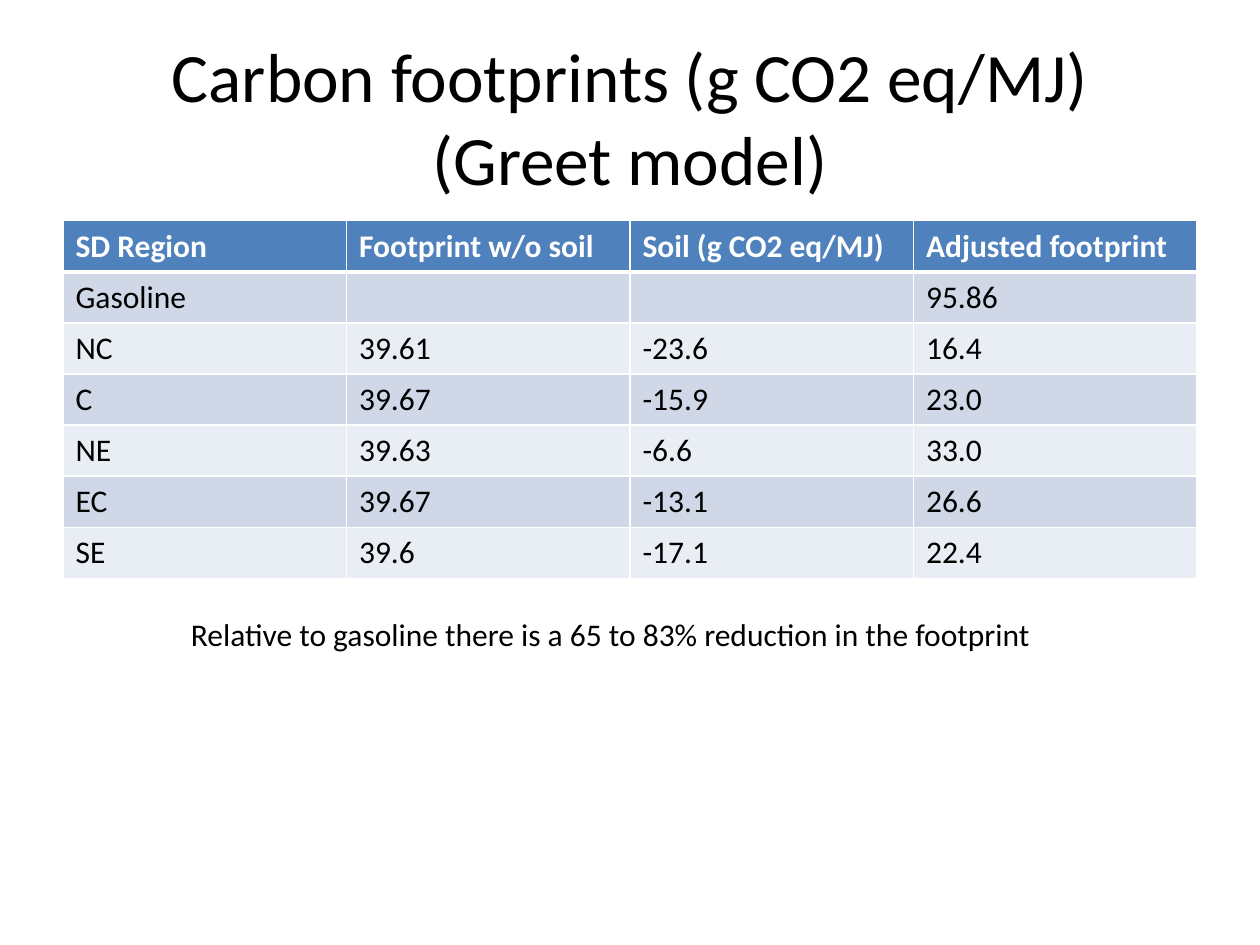
from lxml import etree
from pptx import Presentation
from pptx.dml.color import RGBColor
from pptx.enum.text import MSO_ANCHOR, PP_ALIGN
from pptx.oxml.ns import qn
from pptx.util import Cm, Pt

LEFT, CENTER = PP_ALIGN.LEFT, PP_ALIGN.CENTER
TOP, MIDDLE = MSO_ANCHOR.TOP, MSO_ANCHOR.MIDDLE

FONT = "Calibri"
BLACK, WHITE = "000000", "FFFFFF"
HEADER_FILL = "4F81BD"
BAND_FILLS = ("D0D8E8", "E9EDF4")

FOOTPRINTS = [
    ("SD Region", "Footprint w/o soil", "Soil (g CO2 eq/MJ)", "Adjusted footprint"),
    ("Gasoline", "", "", "95.86"),
    ("NC", "39.61", "-23.6", "16.4"),
    ("C", "39.67", "-15.9", "23.0"),
    ("NE", "39.63", "-6.6", "33.0"),
    ("EC", "39.67", "-13.1", "26.6"),
    ("SE", "39.6", "-17.1", "22.4"),
]


def color(value):
    return RGBColor.from_string(value)


def write_text(text_frame, text, size=18, fill=BLACK, bold=False, align=LEFT):
    paragraph = text_frame.paragraphs[0]
    paragraph.text = text
    paragraph.alignment = align
    for run in paragraph.runs:
        run.font.name = FONT
        run.font.size = Pt(size)
        run.font.bold = bold
        run.font.color.rgb = color(fill)


def add_text(slide, text, left, top, width, height, wrap=True, anchor=TOP, **text_format):
    box = slide.shapes.add_textbox(Cm(left), Cm(top), Cm(width), Cm(height))
    box.text_frame.word_wrap = wrap
    box.text_frame.vertical_anchor = anchor
    write_text(box.text_frame, text, **text_format)


def set_borders(cell, **widths):
    properties = cell._tc.get_or_add_tcPr()
    for side in ("L", "R", "T", "B"):
        width = Pt(widths.get(side, 1))
        line = etree.SubElement(properties, qn(f"a:ln{side}"), w=str(width))
        fill = etree.SubElement(line, qn("a:solidFill"))
        etree.SubElement(fill, qn("a:srgbClr"), val=WHITE)


def add_table(slide, rows, left, top, width, row_height):
    frame = slide.shapes.add_table(
        len(rows), len(rows[0]), Cm(left), Cm(top), Cm(width), Cm(row_height * len(rows))
    )
    for row_index, row in enumerate(rows):
        is_header = row_index == 0
        # A thick rule separates the header from the first body row
        rule = {0: {"B": 3}, 1: {"T": 3}}.get(row_index, {})
        for column_index, text in enumerate(row):
            cell = frame.table.cell(row_index, column_index)
            set_borders(cell, **rule)
            cell.fill.solid()
            cell.fill.fore_color.rgb = color(
                HEADER_FILL if is_header else BAND_FILLS[(row_index - 1) % 2]
            )
            write_text(cell.text_frame, text, bold=is_header, fill=WHITE if is_header else BLACK)


def main():
    presentation = Presentation()
    presentation.slide_width, presentation.slide_height = Cm(25.4), Cm(19.05)
    slide = presentation.slides.add_slide(presentation.slide_layouts[6])

    # Title
    add_text(slide, "Carbon footprints (g CO2 eq/MJ)\v(Greet model)",
             1.27, 0.76, 22.86, 3.18, anchor=MIDDLE, size=39.6, align=CENTER)

    # Footprint by region
    add_table(slide, FOOTPRINTS, left=1.27, top=4.45, width=22.86, row_height=1.03)

    # Conclusion
    add_text(slide, "Relative to gasoline there is a 65 to 83% reduction in the footprint",
             3.6, 12.27, 17.65, 1.03, wrap=False)

    presentation.save("out.pptx")


if __name__ == "__main__":
    main()
